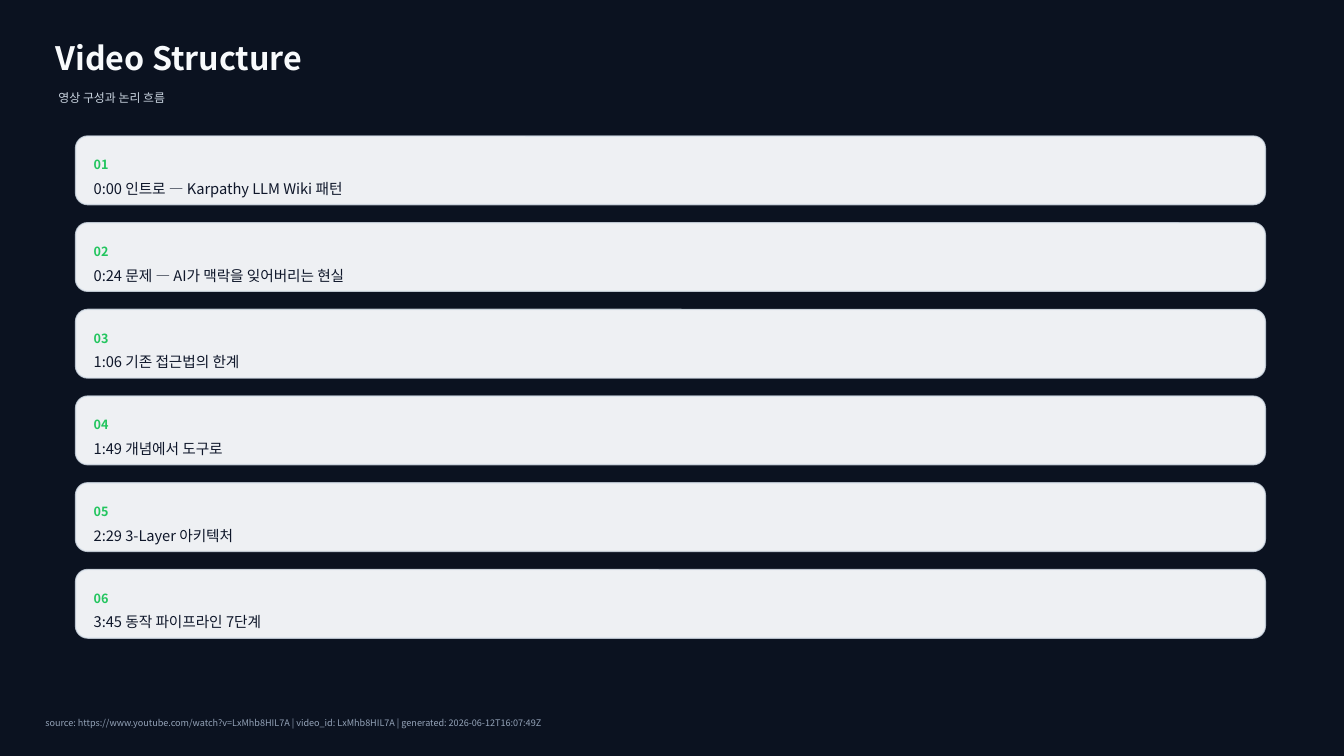
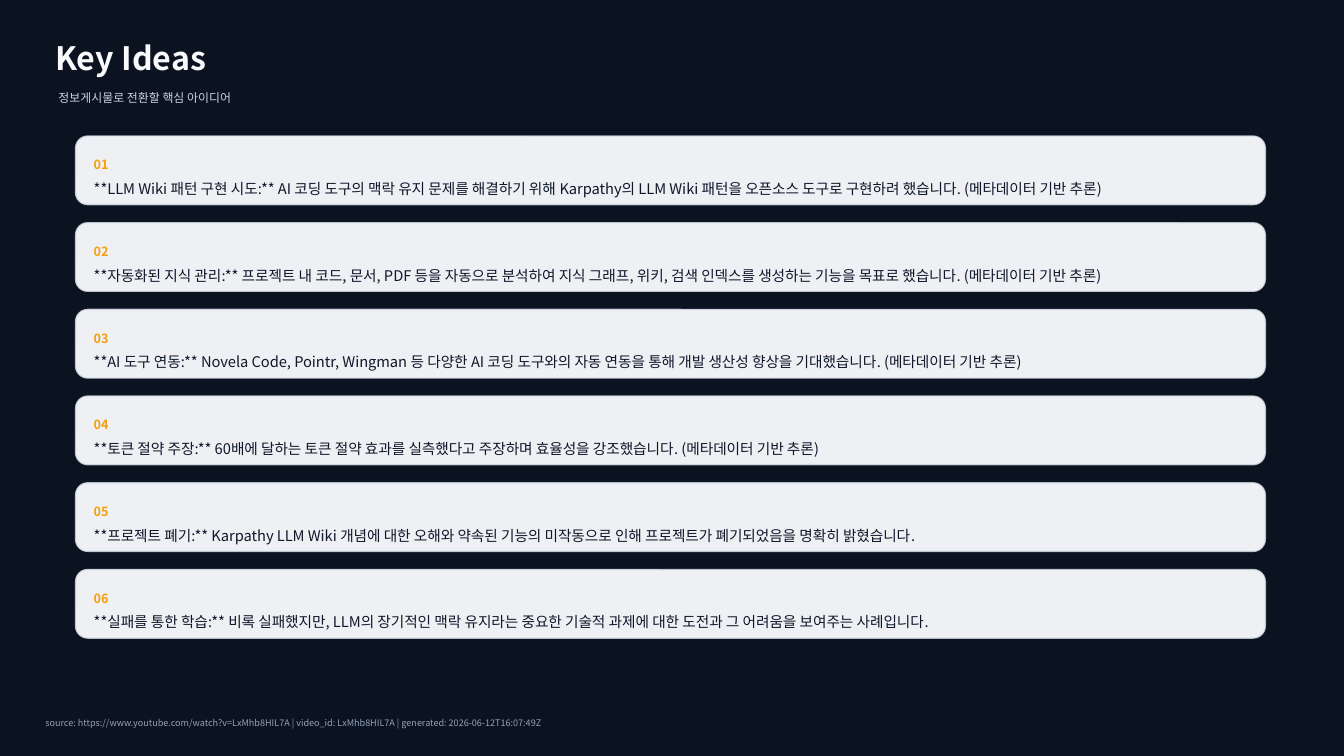
from lxml import etree
from pptx import Presentation
from pptx import util as u
from pptx.dml.color import RGBColor
from pptx.enum import shapes, text
from pptx.oxml.ns import qn

PX = 9144  # EMU; 100 px to the inch
FONT = "Noto Sans CJK KR"

NIGHT = RGBColor(0x0B, 0x12, 0x20)
WHITE = RGBColor(0xF8, 0xFA, 0xFC)
SILVER = RGBColor(0xCB, 0xD5, 0xE1)
BORDER = RGBColor(0xD7, 0xE0, 0xEA)
INK = RGBColor(0x0F, 0x17, 0x2A)
SLATE = RGBColor(0x94, 0xA3, 0xB8)
GREEN = RGBColor(0x22, 0xC5, 0x5E)
AMBER = RGBColor(0xF5, 0x9E, 0x0B)

CARD_LEFT, CARD_TOP, CARD_WIDTH, CARD_HEIGHT = 75, 135, 1180, 68
CARD_STEP = 86
CARD_PADDING = 18
CARD_RADIUS = 12

SOURCE = ("source: https://www.youtube.com/watch?v=LxMhb8HIL7A | "
          "video_id: LxMhb8HIL7A | generated: 2026-06-12T16:07:49Z")

CHAPTERS = [
    "0:00 인트로 — Karpathy LLM Wiki 패턴",
    "0:24 문제 — AI가 맥락을 잊어버리는 현실",
    "1:06 기존 접근법의 한계",
    "1:49 개념에서 도구로",
    "2:29 3-Layer 아키텍처",
    "3:45 동작 파이프라인 7단계",
]

IDEAS = [
    "**LLM Wiki 패턴 구현 시도:** AI 코딩 도구의 맥락 유지 문제를 해결하기 위해 "
    "Karpathy의 LLM Wiki 패턴을 오픈소스 도구로 구현하려 했습니다. (메타데이터 기반 추론)",
    "**자동화된 지식 관리:** 프로젝트 내 코드, 문서, PDF 등을 자동으로 분석하여 지식 그래프, "
    "위키, 검색 인덱스를 생성하는 기능을 목표로 했습니다. (메타데이터 기반 추론)",
    "**AI 도구 연동:** Novela Code, Pointr, Wingman 등 다양한 AI 코딩 도구와의 "
    "자동 연동을 통해 개발 생산성 향상을 기대했습니다. (메타데이터 기반 추론)",
    "**토큰 절약 주장:** 60배에 달하는 토큰 절약 효과를 실측했다고 주장하며 "
    "효율성을 강조했습니다. (메타데이터 기반 추론)",
    "**프로젝트 폐기:** Karpathy LLM Wiki 개념에 대한 오해와 약속된 기능의 미작동으로 인해 "
    "프로젝트가 폐기되었음을 명확히 밝혔습니다.",
    "**실패를 통한 학습:** 비록 실패했지만, LLM의 장기적인 맥락 유지라는 중요한 기술적 과제에 "
    "대한 도전과 그 어려움을 보여주는 사례입니다.",
]


def emu(*lengths):
    return [u.Emu(length * PX) for length in lengths]


def set_opacity(fill, percent):
    """Make a solid fill (a:solidFill parent's colour) partly see-through."""
    color = fill.find(qn("a:solidFill"))[0]
    etree.SubElement(color, qn("a:alpha"), val=str(percent * 1000))


def add_label(page, place, words, size, color, bold=False):
    box = page.shapes.add_textbox(*emu(*place))
    frame = box.text_frame
    frame.word_wrap = True
    frame.vertical_anchor = text.MSO_ANCHOR.MIDDLE
    frame.margin_left = frame.margin_top = frame.margin_right = frame.margin_bottom = 0
    span = frame.paragraphs[0].add_run()
    span.text = words
    span.font.name = FONT
    span.font.size = u.Pt(size)
    span.font.bold = bold
    span.font.color.rgb = color
    etree.SubElement(span.font._element, qn("a:ea"), typeface=FONT)


def add_card(page, index, words, accent):
    top = CARD_TOP + index * CARD_STEP
    card = page.shapes.add_shape(shapes.MSO_SHAPE.ROUNDED_RECTANGLE,
                                 *emu(CARD_LEFT, top, CARD_WIDTH, CARD_HEIGHT))
    card.adjustments[0] = CARD_RADIUS / CARD_HEIGHT
    card.shadow.inherit = False
    card.fill.solid()
    card.fill.fore_color.rgb = WHITE
    set_opacity(card._element.spPr, 96)
    card.line.color.rgb = BORDER
    card.line.width = u.Pt(1)
    set_opacity(card._element.spPr.find(qn("a:ln")), 80)

    left = CARD_LEFT + CARD_PADDING
    width = CARD_WIDTH - 2 * CARD_PADDING
    add_label(page, (left, top + 16, width, 25), f"{index + 1:02}", 9, accent, bold=True)
    add_label(page, (left, top + 50, width, 4), words, 10.5, INK)


def add_list_page(deck, title, subtitle, items, accent):
    page = deck.slides.add_slide(deck.slide_layouts[6])
    page.background.fill.solid()
    page.background.fill.fore_color.rgb = NIGHT
    add_label(page, (55, 35, 1200, 45), title, 23, WHITE, bold=True)
    add_label(page, (58, 83, 1150, 28), subtitle, 8.5, SILVER)
    for index, words in enumerate(items):
        add_card(page, index, words, accent)
    add_label(page, (45, 705, 1240, 25), SOURCE, 6.5, SLATE)


def main():
    deck = Presentation()
    deck.slide_width, deck.slide_height = emu(1333, 750)
    add_list_page(deck, "Video Structure", "영상 구성과 논리 흐름", CHAPTERS, GREEN)
    add_list_page(deck, "Key Ideas", "정보게시물로 전환할 핵심 아이디어", IDEAS, AMBER)
    deck.save("out.pptx")


if __name__ == "__main__":
    main()
